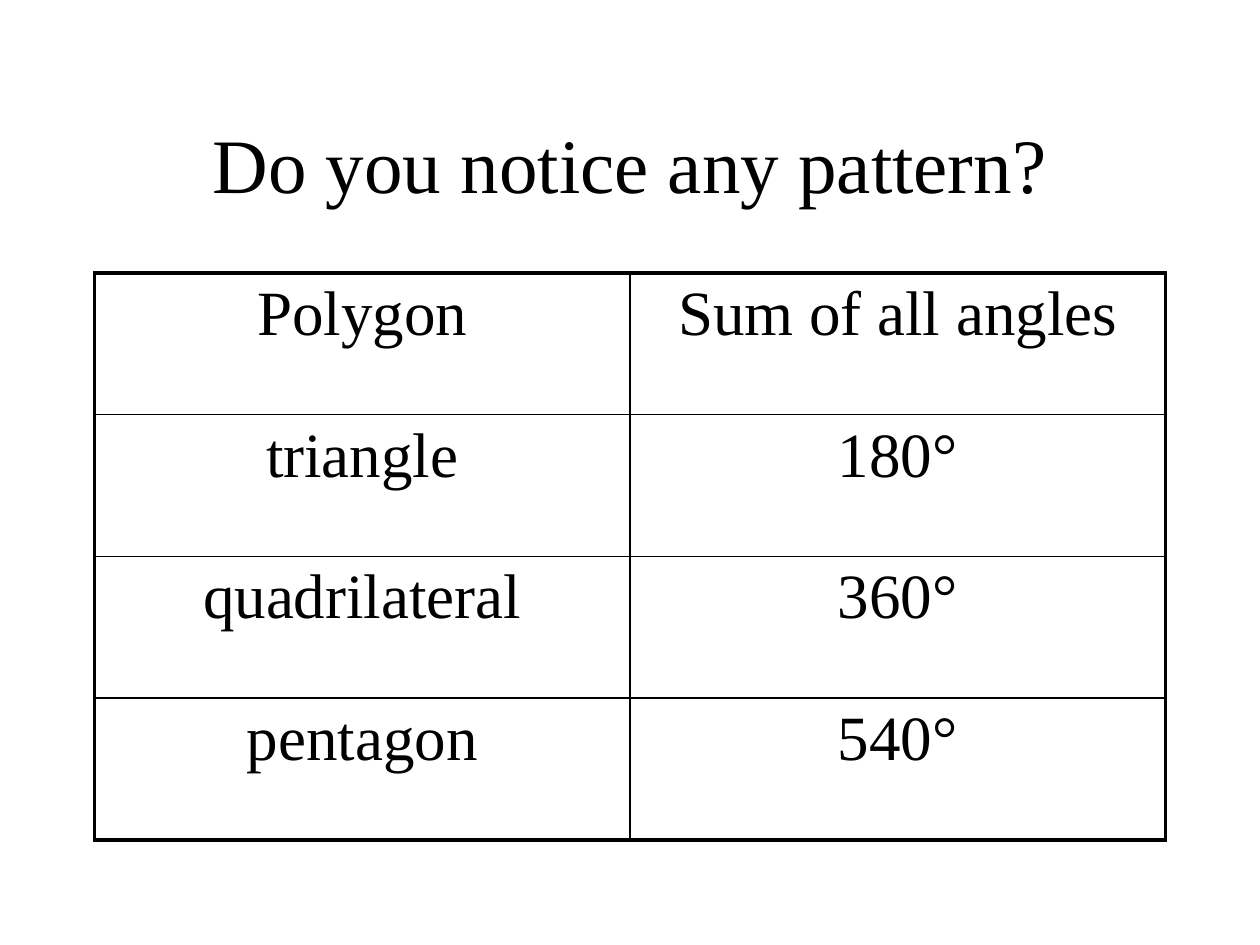
from dataclasses import dataclass

from lxml import etree
from pptx import Presentation
from pptx.dml.color import RGBColor
from pptx.enum.text import MSO_ANCHOR, PP_ALIGN
from pptx.oxml.ns import qn
from pptx.slide import Slide
from pptx.table import _Cell
from pptx.text.text import TextFrame
from pptx.util import Pt

CENTER = PP_ALIGN.CENTER
MIDDLE = MSO_ANCHOR.MIDDLE
COLORS = {"ink": "000000"}
FONT_NAME = "Times New Roman"
OUTER_WIDTH = 2.25
INNER_WIDTH = 1


@dataclass(frozen=True)
class Box:
    left: float
    top: float
    width: float
    height: float

    def lengths(self) -> tuple[Pt, Pt, Pt, Pt]:
        return Pt(self.left), Pt(self.top), Pt(self.width), Pt(self.height)


@dataclass(frozen=True)
class PolygonRow:
    polygon: str
    angle_sum: str


TITLE_BOX = Box(54, 48, 612, 90)
TABLE_BOX = Box(54, 156, 612, 324)
ROWS = [
    PolygonRow("Polygon", "Sum of all angles"),
    PolygonRow("triangle", "180°"),
    PolygonRow("quadrilateral", "360°"),
    PolygonRow("pentagon", "540°"),
]


def write_text(text_frame: TextFrame, text: str, size: float) -> None:
    paragraph = text_frame.paragraphs[0]
    paragraph.alignment = CENTER
    run = paragraph.add_run()
    run.text = text
    font_format = {"name": FONT_NAME, "size": Pt(size), "bold": False}
    for attribute, value in font_format.items():
        setattr(run.font, attribute, value)
    run.font.color.rgb = RGBColor.from_string(COLORS["ink"])


def set_borders(cell: _Cell, widths: dict[str, float]) -> None:
    properties = cell._tc.get_or_add_tcPr()
    for index, (side, width) in enumerate(widths.items()):
        line = etree.Element(qn(f"a:ln{side}"), w=str(Pt(width)))
        fill = etree.SubElement(line, qn("a:solidFill"))
        etree.SubElement(fill, qn("a:srgbClr"), val=COLORS["ink"])
        properties.insert(index, line)


def draw_title(slide: Slide, box: Box, text: str) -> None:
    shape = slide.shapes.add_textbox(*box.lengths())
    frame_format = {"word_wrap": True, "vertical_anchor": MIDDLE}
    for attribute, value in frame_format.items():
        setattr(shape.text_frame, attribute, value)
    write_text(shape.text_frame, text, 44)


def draw_table(slide: Slide, box: Box, rows: list[PolygonRow]) -> None:
    table = slide.shapes.add_table(len(rows), 2, *box.lengths()).table
    for attribute in ("first_row", "horz_banding"):
        setattr(table, attribute, False)
    for row_index, row in enumerate(rows):
        for column_index, text in enumerate((row.polygon, row.angle_sum)):
            cell = table.cell(row_index, column_index)
            cell.fill.background()
            write_text(cell.text_frame, text, 36)
            on_edge = {
                "L": column_index == 0,
                "R": column_index == 1,
                "T": row_index == 0,
                "B": row_index == len(rows) - 1,
            }
            set_borders(cell, {
                side: OUTER_WIDTH if outer else INNER_WIDTH
                for side, outer in on_edge.items()
            })


def main() -> None:
    presentation = Presentation()
    presentation.slide_width = Pt(720)
    presentation.slide_height = Pt(540)
    slide = presentation.slides.add_slide(presentation.slide_layouts[6])
    draw_title(slide, TITLE_BOX, "Do you notice any pattern?")
    draw_table(slide, TABLE_BOX, ROWS)
    presentation.save("out.pptx")


if __name__ == "__main__":
    main()
